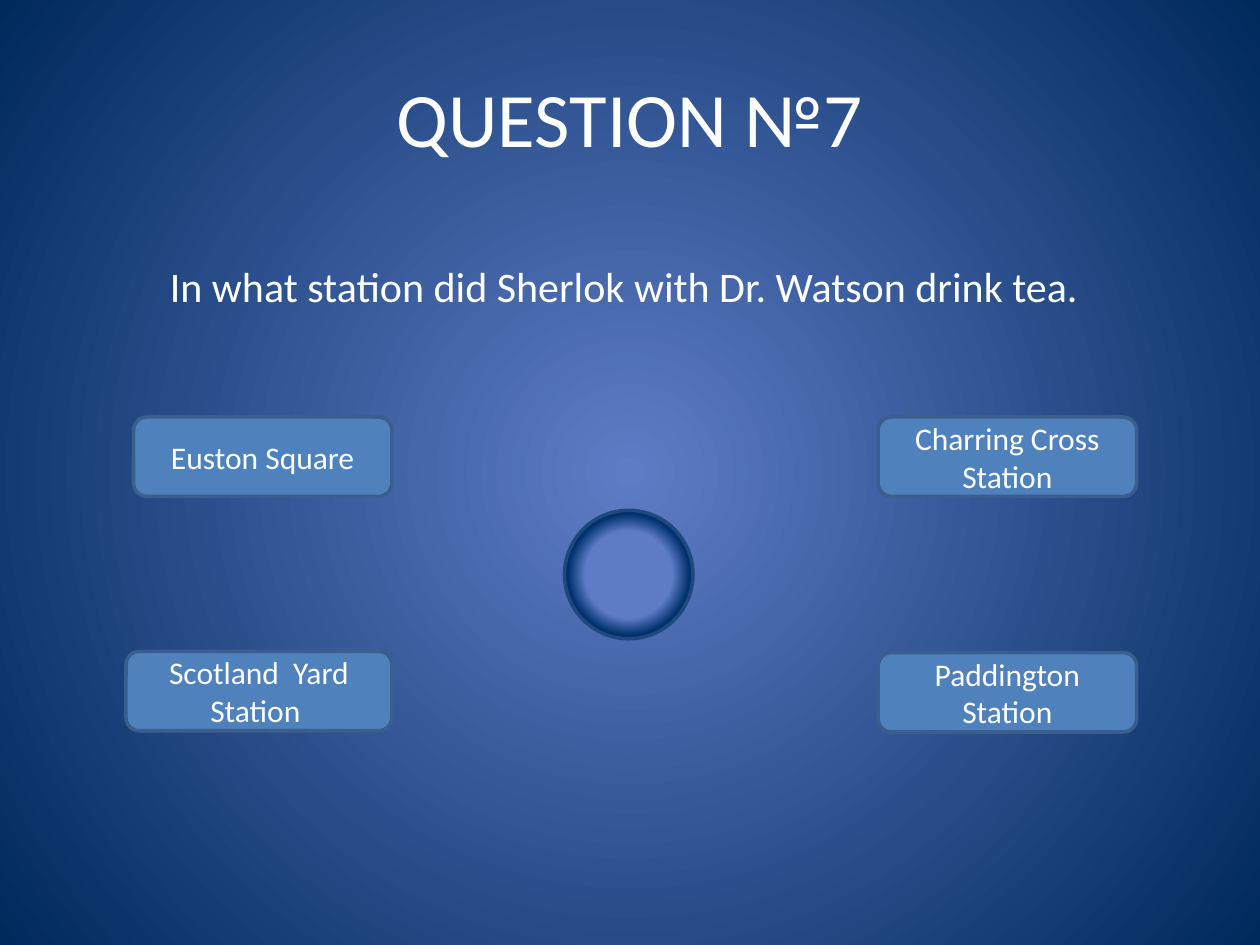
from lxml import etree
from pptx import Presentation
from pptx.dml.color import RGBColor
from pptx.enum.shapes import MSO_SHAPE
from pptx.enum.text import MSO_ANCHOR, PP_ALIGN
from pptx.oxml.ns import qn
from pptx.util import Inches, Pt

# Content
TITLE = "QUESTION №7"
QUESTION = "In what station did Sherlok with Dr. Watson drink tea. "
ANSWERS = [  # lines, left, top, width
    (["Euston Square"], 1.06, 3.31, 2.05),
    (["Charring Cross Station"], 6.97, 3.31, 2.05),
    (["Scotland  Yard", "Station "], 1, 5.17, 2.11),
    (["Paddington Station"], 6.97, 5.18, 2.05),
]
ANSWER_HEIGHT = 0.63
FONT = "Calibri"
COLORS = {
    "text": "FFFFFF",
    "answer": "4F81BD",
    "answer_line": "3A5F8C",
    "circle_line": "1F497D",
    "glow": "5E7CC5",
    "edge": "00295C",
    "circle_edge": "00316D",
}


def color(name):
    return RGBColor.from_string(COLORS[name])


def write(frame, lines, size, anchor):
    frame.word_wrap = True
    frame.vertical_anchor = anchor
    frame.text = "\n".join(lines)
    for paragraph in frame.paragraphs:
        paragraph.alignment = PP_ALIGN.CENTER
        paragraph.font.name = FONT
        paragraph.font.size = Pt(size)
        paragraph.font.color.rgb = color("text")


def add_shape(slide, kind, box, line):
    shape = slide.shapes.add_shape(kind, *map(Inches, box))
    shape.shadow.inherit = False
    shape.line.color.rgb = color(line)
    shape.line.width = Pt(2)
    return shape


def radial_gradient(fill, element, stops):
    """Turn the fill into a circular gradient around the centre."""
    fill.solid()
    solid = element.find(".//" + qn("a:solidFill"))
    gradient = etree.Element(qn("a:gradFill"), rotWithShape="1")
    stop_list = etree.SubElement(gradient, qn("a:gsLst"))
    for percent, name in stops:
        stop = etree.SubElement(stop_list, qn("a:gs"), pos=str(percent * 1000))
        etree.SubElement(stop, qn("a:srgbClr"), val=COLORS[name])
    circle = etree.SubElement(gradient, qn("a:path"), path="circle")
    etree.SubElement(circle, qn("a:fillToRect"),
                     {side: "50000" for side in "ltrb"})
    solid.getparent().replace(solid, gradient)


def main():
    presentation = Presentation()
    presentation.slide_width, presentation.slide_height = Inches(10), Inches(7.5)
    slide = presentation.slides.add_slide(presentation.slide_layouts[5])
    radial_gradient(slide.background.fill, slide._element,
                    [(0, "glow"), (100, "edge")])

    # Title and question
    title = slide.shapes.title
    title.left, title.top, title.width, title.height = map(
        Inches, (0.5, 0.3, 9, 1.25))
    write(title.text_frame, [TITLE], 44, MSO_ANCHOR.MIDDLE)
    question = slide.shapes.add_textbox(*map(Inches, (0.66, 2.02, 8.66, 0.91)))
    write(question.text_frame, [QUESTION], 24, MSO_ANCHOR.TOP)

    # Answer buttons
    for lines, left, top, width in ANSWERS:
        button = add_shape(slide, MSO_SHAPE.ROUNDED_RECTANGLE,
                           (left, top, width, ANSWER_HEIGHT), "answer_line")
        button.fill.solid()
        button.fill.fore_color.rgb = color("answer")
        write(button.text_frame, lines, 18, MSO_ANCHOR.MIDDLE)

    # Central circle
    circle = add_shape(slide, MSO_SHAPE.OVAL, (4.48, 4.05, 1.02, 1.02),
                       "circle_line")
    radial_gradient(circle.fill, circle._element,
                    [(48, "glow"), (67, "circle_edge")])

    presentation.save("out.pptx")


if __name__ == "__main__":
    main()
